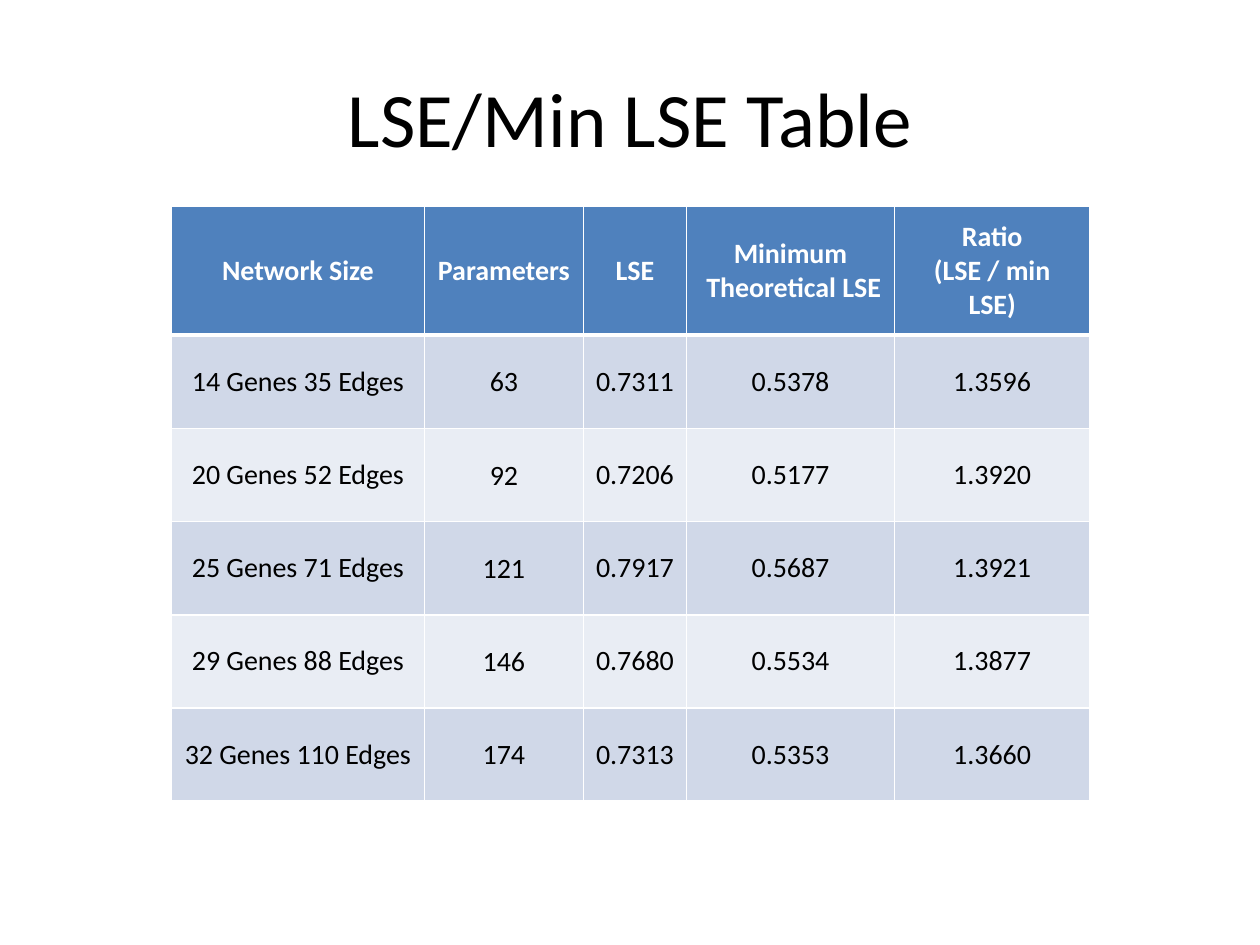
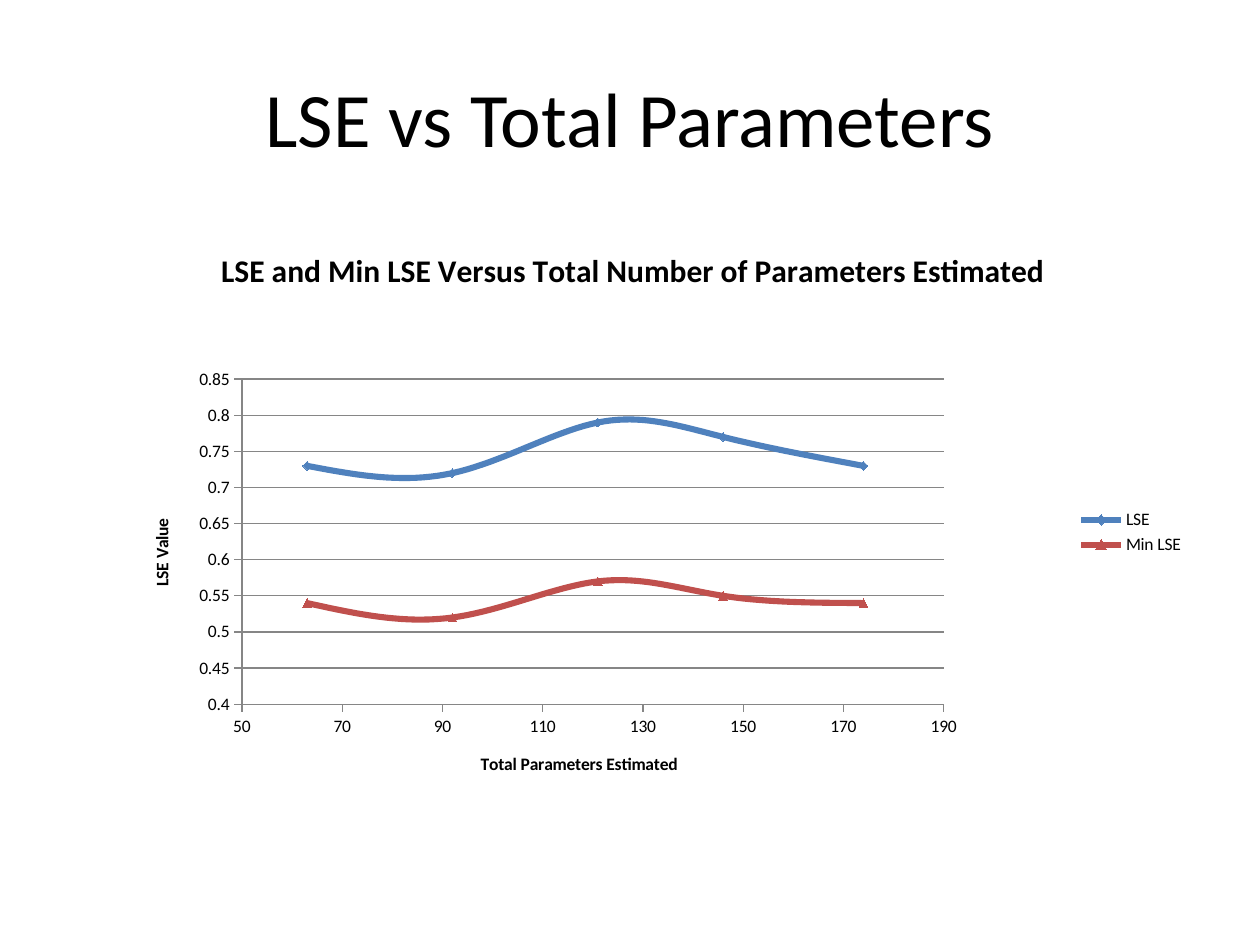
from dataclasses import dataclass

from lxml import etree
from pptx import Presentation
from pptx.chart.data import XyChartData
from pptx.dml.color import RGBColor
from pptx.enum import chart as kinds, text
from pptx.oxml import ns
from pptx.util import Inches, Pt

FONT = "Calibri"
BLACK, WHITE, GRID = "000000", "FFFFFF", "868686"
BLUE, RED = "4F81BD", "C0504D"
BANDS = ("D0D8E8", "E9EDF4")

HEADINGS = (
    "Network Size",
    "Parameters",
    "LSE",
    "Minimum\n Theoretical LSE",
    "Ratio\n(LSE / min LSE)",
)
COLUMN_WIDTHS = (2.01, 1.26, 0.82, 1.65, 1.55)
PARAMETERS_COLUMN = HEADINGS.index("Parameters")
HEADER_HEIGHT, ROW_HEIGHT = 1.02, 0.74
CHART_WIDTH, CHART_HEIGHT = 9, 4.95


@dataclass(frozen=True)
class Network:
    size: str
    parameters: int
    lse: float
    minimum: float
    ratio: float

    def cells(self) -> tuple[str, ...]:
        return (self.size, str(self.parameters),
                *(f"{value:.4f}" for value in (self.lse, self.minimum, self.ratio)))


@dataclass(frozen=True)
class Curve:
    name: str
    field: str
    color: str
    marker: kinds.XL_MARKER_STYLE


@dataclass(frozen=True)
class AxisStyle:
    title: str
    minimum: float
    maximum: float
    step: float
    title_left: float
    title_top: float


NETWORKS = (
    Network("14 Genes 35 Edges", 63, 0.7311, 0.5378, 1.3596),
    Network("20 Genes 52 Edges", 92, 0.7206, 0.5177, 1.3920),
    Network("25 Genes 71 Edges", 121, 0.7917, 0.5687, 1.3921),
    Network("29 Genes 88 Edges", 146, 0.7680, 0.5534, 1.3877),
    Network("32 Genes 110 Edges", 174, 0.7313, 0.5353, 1.3660),
)
CURVES = (
    Curve("LSE", "lse", BLUE, kinds.XL_MARKER_STYLE.DIAMOND),
    Curve("Min LSE", "minimum", RED, kinds.XL_MARKER_STYLE.TRIANGLE),
)
PARAMETERS_AXIS = AxisStyle("Total Parameters Estimated", 50, 190, 20, 3.29, 4.2)
LSE_AXIS = AxisStyle("LSE Value", 0.4, 0.85, 0.05, 0.67, 2.34)


def color(value: str) -> RGBColor:
    return RGBColor.from_string(value)


def style_font(font, size: float, shade: str = BLACK, bold: bool = False) -> None:
    font.name = FONT
    font.size = Pt(size)
    font.bold = bold
    font.color.rgb = color(shade)


def write(frame, content: str, size: float, shade: str = BLACK, bold: bool = False) -> None:
    for index, line in enumerate(content.split("\n")):
        para = frame.paragraphs[0] if index == 0 else frame.add_paragraph()
        para.alignment = text.PP_ALIGN.CENTER
        span = para.add_run()
        span.text = line
        style_font(span.font, size, shade, bold)


def add_page(deck, title: str):
    page = deck.slides.add_slide(deck.slide_layouts[6])
    box = page.shapes.add_textbox(Inches(0.5), Inches(0.3), Inches(9), Inches(1.25))
    box.text_frame.word_wrap = True
    box.text_frame.vertical_anchor = text.MSO_ANCHOR.MIDDLE
    write(box.text_frame, title, 44)
    return page


def add_border(cell, side: str, width: float) -> None:
    line = etree.SubElement(cell._tc.get_or_add_tcPr(), ns.qn(f"a:ln{side}"), w=str(Pt(width)))
    fill = etree.SubElement(line, ns.qn("a:solidFill"))
    etree.SubElement(fill, ns.qn("a:srgbClr"), val=WHITE)


def fill_cell(cell, content: str, row: int, column: int) -> None:
    header = row == 0
    cell.vertical_anchor = text.MSO_ANCHOR.MIDDLE
    if column == PARAMETERS_COLUMN and not header:
        cell.margin_left = cell.margin_top = cell.margin_right = Inches(0.01)
        cell.margin_bottom = 0
    widths = {"L": 1, "R": 1, "T": 3 if row == 1 else 1, "B": 3 if header else 1}
    for side, width in widths.items():
        add_border(cell, side, width)
    cell.fill.solid()
    cell.fill.fore_color.rgb = color(BLUE if header else BANDS[(row - 1) % 2])
    write(cell.text_frame, content, 16, WHITE if header else BLACK, header)


def add_network_table(page) -> None:
    rows = [HEADINGS, *(network.cells() for network in NETWORKS)]
    height = HEADER_HEIGHT + ROW_HEIGHT * len(NETWORKS)
    table = page.shapes.add_table(
        len(rows), len(HEADINGS), Inches(1.36), Inches(1.64),
        Inches(sum(COLUMN_WIDTHS)), Inches(height)).table
    for column, width in zip(table.columns, COLUMN_WIDTHS):
        column.width = Inches(width)
    for row, contents in enumerate(rows):
        table.rows[row].height = Inches(ROW_HEIGHT if row else HEADER_HEIGHT)
        for column, content in enumerate(contents):
            fill_cell(table.cell(row, column), content, row, column)


def place(element, index: int, left: float, top: float,
          size: tuple[float, float] | None = None) -> None:
    for existing in element.findall(ns.qn("c:layout")):
        element.remove(existing)
    settings = {"layoutTarget": "inner"} if size else {}
    settings |= {"xMode": "edge", "yMode": "edge",
                 "x": left / CHART_WIDTH, "y": top / CHART_HEIGHT}
    if size:
        settings |= {"w": size[0] / CHART_WIDTH, "h": size[1] / CHART_HEIGHT}
    layout = etree.Element(ns.qn("c:layout"))
    manual = etree.SubElement(layout, ns.qn("c:manualLayout"))
    for name, value in settings.items():
        etree.SubElement(manual, ns.qn(f"c:{name}"), val=str(value))
    element.insert(index, layout)


def add_chart_text(title, content: str, size: float, left: float, top: float) -> None:
    write(title.text_frame, content, size, bold=True)
    place(title._element, 1, left, top)


def style_axis(axis, style: AxisStyle) -> None:
    axis.minimum_scale, axis.maximum_scale = style.minimum, style.maximum
    axis.major_unit = style.step
    axis.major_tick_mark = kinds.XL_TICK_MARK.OUTSIDE
    axis.minor_tick_mark = kinds.XL_TICK_MARK.NONE
    axis.tick_labels.number_format = "General"
    axis.tick_labels.number_format_is_linked = False
    style_font(axis.tick_labels.font, 10)
    axis.format.line.color.rgb = color(GRID)
    axis.format.line.width = Pt(0.75)
    add_chart_text(axis.axis_title, style.title, 10, style.title_left, style.title_top)


def style_curve(series, curve: Curve) -> None:
    series._element.find(ns.qn("c:smooth")).set("val", "1")
    series.format.line.color.rgb = color(curve.color)
    series.format.line.width = Pt(3.5)
    marker = series.marker
    marker.style, marker.size = curve.marker, 5
    marker.format.fill.solid()
    marker.format.fill.fore_color.rgb = color(curve.color)
    marker.format.line.color.rgb = color(curve.color)


def add_lse_chart(page) -> None:
    data = XyChartData()
    for curve in CURVES:
        points = data.add_series(curve.name)
        for network in NETWORKS:
            points.add_data_point(network.parameters, round(getattr(network, curve.field), 2))
    chart = page.shapes.add_chart(
        kinds.XL_CHART_TYPE.XY_SCATTER_SMOOTH, Inches(0.5), Inches(1.75),
        Inches(CHART_WIDTH), Inches(CHART_HEIGHT), data).chart
    style_font(chart.font, 10)
    chart.has_title = True
    add_chart_text(chart.chart_title,
                   "LSE and Min LSE Versus Total Number of Parameters Estimated",
                   18, 1.21, 0.18)
    chart.has_legend = True
    chart.legend.position = kinds.XL_LEGEND_POSITION.RIGHT
    chart.legend.include_in_layout = False
    style_font(chart.legend.font, 10)
    style_axis(chart.category_axis, PARAMETERS_AXIS)
    style_axis(chart.value_axis, LSE_AXIS)
    chart.category_axis.has_major_gridlines = False
    gridline = chart.value_axis.major_gridlines.format.line
    gridline.color.rgb = color(GRID)
    gridline.width = Pt(0.75)
    plot = chart.plots[0]
    plot.vary_by_categories = False
    for series, curve in zip(plot.series, CURVES):
        style_curve(series, curve)
    place(plot._element.getparent(), 0, 1.42, 1.26, (5.57, 2.58))


def main() -> None:
    deck = Presentation()
    deck.slide_width, deck.slide_height = Inches(10), Inches(7.5)
    add_network_table(add_page(deck, "LSE/Min LSE Table"))
    add_lse_chart(add_page(deck, "LSE vs Total Parameters"))
    deck.save("out.pptx")


if __name__ == "__main__":
    main()
